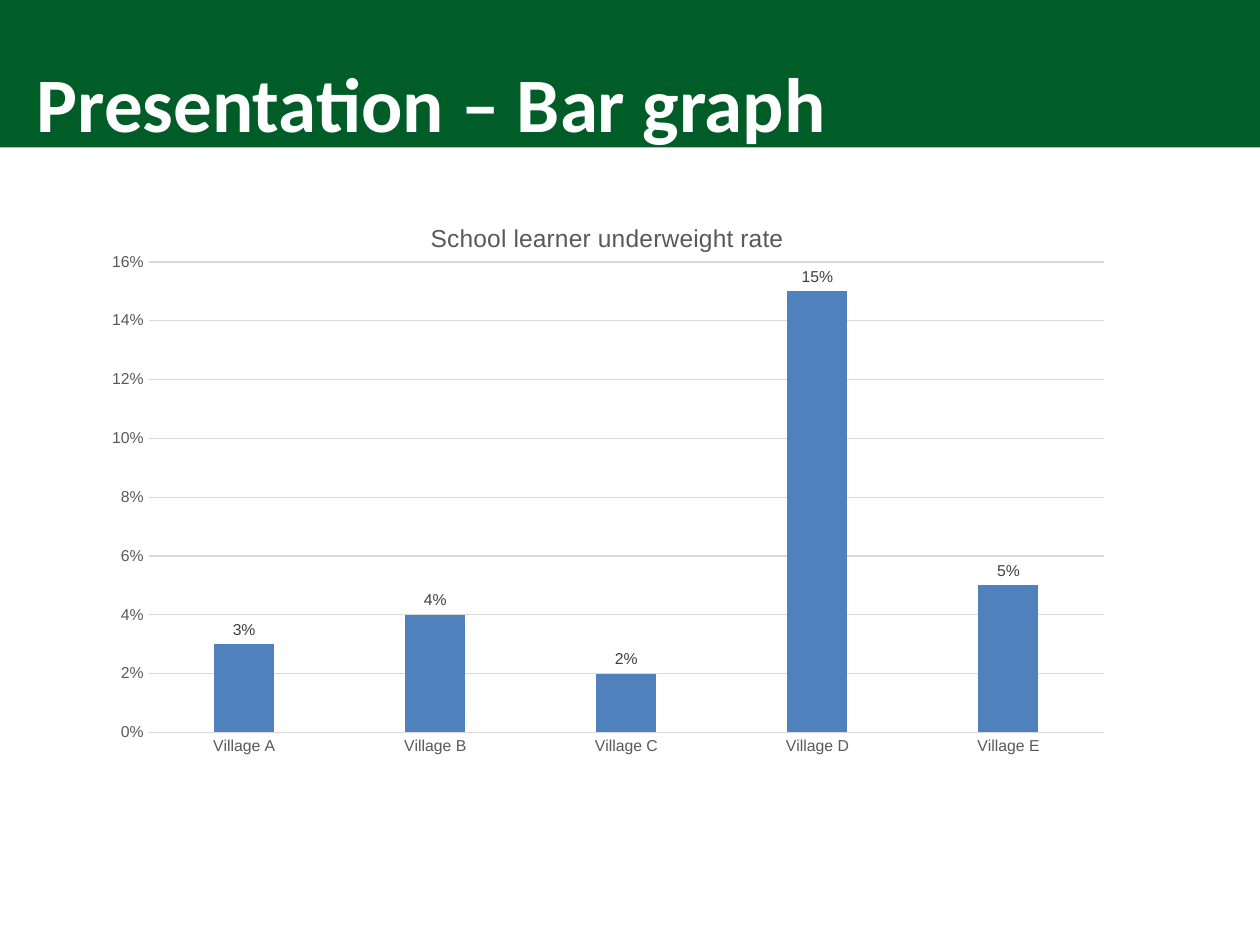
from dataclasses import dataclass

from lxml.etree import SubElement
from pptx import Presentation
from pptx.chart.data import CategoryChartData
from pptx.dml.color import RGBColor
from pptx.enum.chart import XL_CHART_TYPE, XL_LABEL_POSITION, XL_TICK_MARK
from pptx.enum.shapes import MSO_SHAPE
from pptx.enum.text import MSO_ANCHOR, MSO_AUTO_SIZE, PP_ALIGN
from pptx.oxml.ns import qn
from pptx.util import Inches, Pt


@dataclass(frozen=True)
class Theme:
    band: str = "005D28"
    heading: str = "FFFFFF"
    bar: str = "4F81BD"
    grid: str = "D9D9D9"
    axis_text: str = "595959"
    label_text: str = "404040"
    heading_font: str = "Calibri"
    chart_font: str = "Arial"
    heading_size: int = 44
    chart_title_size: int = 14
    chart_text_size: int = 9
    line_width: float = 0.75


THEME = Theme()
WIDTH, HEIGHT = Inches(10), Inches(7.5)

# Left, top, width and height in inches, placed as shares of the slide
BAND = (0, 0, 10, 1.17)
HEADING = (0.19, 0.46, 8.53, 0.77)
CHART = (0.73, 1.58, 8.18, 4.71)
PLOT = {"x": 0.055, "y": 0.106, "w": 0.927, "h": 0.793}

UNDERWEIGHT_RATES = {
    "Village A": 0.03,
    "Village B": 0.04,
    "Village C": 0.02,
    "Village D": 0.15,
    "Village E": 0.05,
}


def apply(target, formats):
    for attribute, value in formats.items():
        setattr(target, attribute, value)


def set_font(font, name, size, color, bold=False):
    apply(font, {"name": name, "size": Pt(size), "bold": bold})
    font.color.rgb = RGBColor.from_string(color)


def set_line(line, color):
    line.color.rgb = RGBColor.from_string(color)
    line.width = Pt(THEME.line_width)


def add_band(slide, box):
    band = slide.shapes.add_shape(MSO_SHAPE.RECTANGLE, *box)
    band.shadow.inherit = False
    band.fill.solid()
    band.fill.fore_color.rgb = RGBColor.from_string(THEME.band)
    band.line.fill.background()
    # Send the band behind the heading
    slide.shapes.element.insert(2, band.element)


def place_heading(slide, box, wording):
    heading = slide.shapes.title
    apply(heading, dict(zip(("left", "top", "width", "height"), box)))
    frame = heading.text_frame
    frame.text = wording
    apply(frame, {
        "auto_size": MSO_AUTO_SIZE.NONE,
        "word_wrap": True,
        "vertical_anchor": MSO_ANCHOR.BOTTOM,
        "margin_left": Inches(0.1),
        "margin_right": Inches(0.1),
        "margin_top": Inches(0.05),
        "margin_bottom": Inches(0.05),
    })
    paragraph = frame.paragraphs[0]
    apply(paragraph, {"alignment": PP_ALIGN.LEFT, "line_spacing": 0.85})
    set_font(paragraph.runs[0].font, THEME.heading_font, THEME.heading_size,
             THEME.heading, bold=True)


def fix_plot_area(chart, shares):
    plot_area = chart.element.find(".//" + qn("c:plotArea"))
    layout = plot_area.find(qn("c:layout"))
    if layout is None:
        layout = SubElement(plot_area, qn("c:layout"))
        plot_area.insert(0, layout)
    manual = SubElement(layout, qn("c:manualLayout"))
    settings = {"layoutTarget": "inner", "xMode": "edge", "yMode": "edge", **shares}
    for tag, value in settings.items():
        SubElement(manual, qn(f"c:{tag}")).set("val", str(value))


def format_axes(chart):
    for axis in (chart.category_axis, chart.value_axis):
        apply(axis, {"major_tick_mark": XL_TICK_MARK.NONE,
                     "minor_tick_mark": XL_TICK_MARK.NONE})
        set_font(axis.tick_labels.font, THEME.chart_font,
                 THEME.chart_text_size, THEME.axis_text)
    set_line(chart.category_axis.format.line, THEME.grid)
    rates = chart.value_axis
    apply(rates, {"minimum_scale": 0, "maximum_scale": 0.16,
                  "major_unit": 0.02, "has_major_gridlines": True})
    apply(rates.tick_labels, {"number_format": "0%",
                              "number_format_is_linked": False})
    set_line(rates.major_gridlines.format.line, THEME.grid)
    rates.format.line.fill.background()


def format_bars(plot):
    apply(plot, {"gap_width": 219, "overlap": -27,
                 "vary_by_categories": False, "has_data_labels": True})
    bars = plot.series[0].format.fill
    bars.solid()
    bars.fore_color.rgb = RGBColor.from_string(THEME.bar)
    labels = plot.data_labels
    apply(labels, {"show_value": True, "number_format": "0%",
                   "number_format_is_linked": False,
                   "position": XL_LABEL_POSITION.OUTSIDE_END})
    set_font(labels.font, THEME.chart_font, THEME.chart_text_size, THEME.label_text)


def add_rate_chart(slide, box, title, rates):
    data = CategoryChartData(number_format="0%")
    data.categories = list(rates)
    data.add_series("Series 1", list(rates.values()))
    chart = slide.shapes.add_chart(XL_CHART_TYPE.COLUMN_CLUSTERED, *box, data).chart
    apply(chart, {"has_legend": False, "has_title": True})
    apply(chart.font, {"name": THEME.chart_font, "size": Pt(10)})
    chart.chart_title.include_in_layout = False
    title_frame = chart.chart_title.text_frame
    title_frame.text = title
    set_font(title_frame.paragraphs[0].runs[0].font, THEME.chart_font,
             THEME.chart_title_size, THEME.axis_text)
    fix_plot_area(chart, PLOT)
    format_axes(chart)
    format_bars(chart.plots[0])


def on_slide(box):
    left, top, width, height = box
    return (int(WIDTH * left / 10), int(HEIGHT * top / 7.5),
            int(WIDTH * width / 10), int(HEIGHT * height / 7.5))


def main():
    deck = Presentation()
    apply(deck, {"slide_width": WIDTH, "slide_height": HEIGHT})
    slide = deck.slides.add_slide(deck.slide_layouts.get_by_name("Title Only"))
    add_band(slide, on_slide(BAND))
    place_heading(slide, on_slide(HEADING), "Presentation – Bar graph")
    add_rate_chart(slide, on_slide(CHART), "School learner underweight rate",
                   UNDERWEIGHT_RATES)
    deck.save("out.pptx")


if __name__ == "__main__":
    main()
